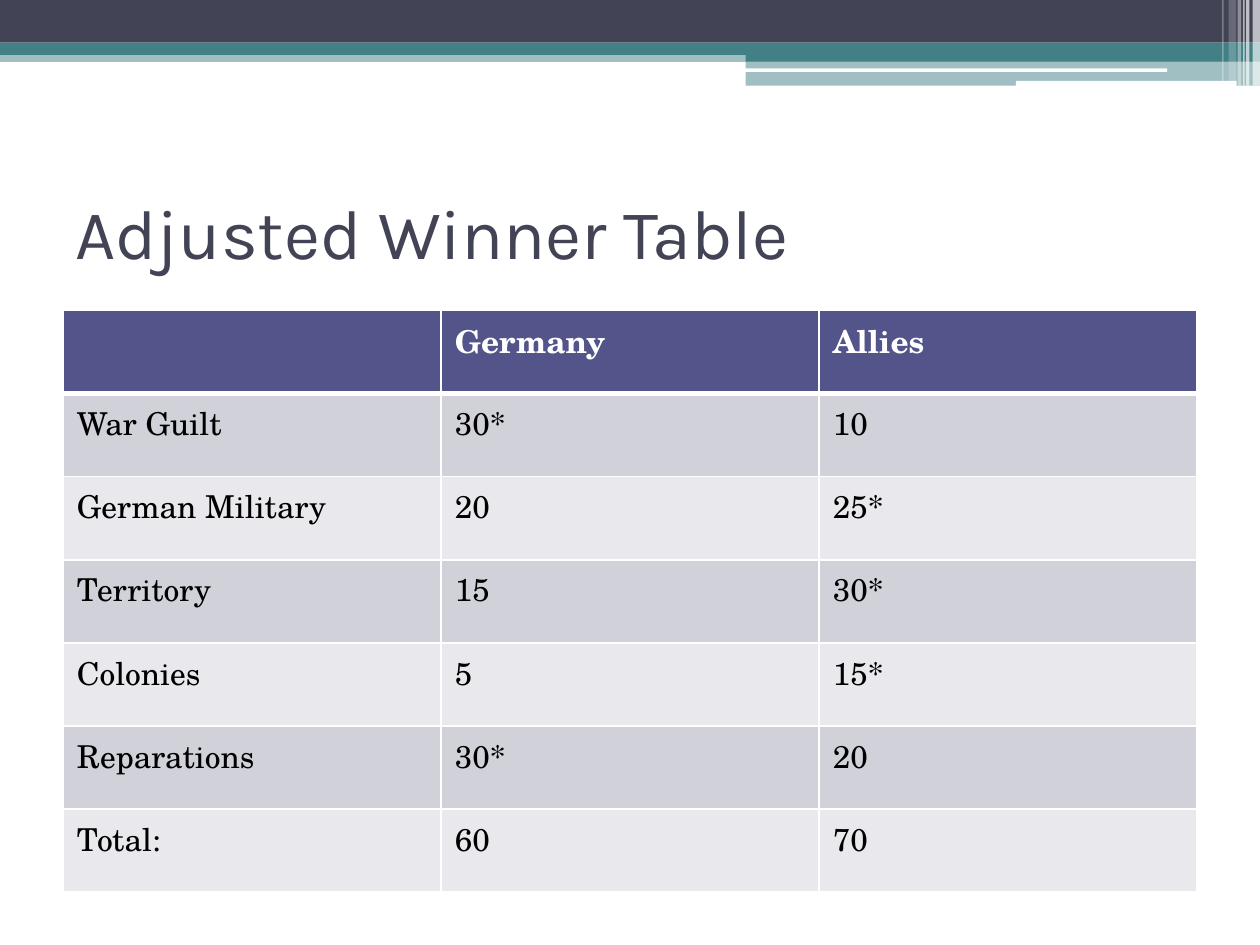
from dataclasses import dataclass

import pptx
import pptx.dml.color
import pptx.enum.shapes
import pptx.enum.text
import pptx.oxml.ns
import pptx.slide
import pptx.table
import pptx.util
from lxml import etree

Cm = pptx.util.Cm
Pt = pptx.util.Pt
RGBColor = pptx.dml.color.RGBColor
Preset = pptx.enum.shapes.MSO_SHAPE
qn = pptx.oxml.ns.qn

WHITE = RGBColor(0xFF, 0xFF, 0xFF)
BLACK = RGBColor(0x00, 0x00, 0x00)
SLATE = RGBColor(0x42, 0x44, 0x56)
TEAL = RGBColor(0x43, 0x80, 0x86)
INDIGO = RGBColor(0x53, 0x54, 0x8A)
DARK_BAND = RGBColor(0xD1, 0xD1, 0xDA)
LIGHT_BAND = RGBColor(0xE9, 0xE9, 0xED)

TITLE_FONT = "Karla"
TABLE_FONT = "TeX Gyre Schola"


@dataclass(frozen=True)
class Bar:
    left: float
    top: float
    width: float
    height: float
    color: RGBColor
    opacity: int = 100
    rounded: bool = False


BARS = [
    Bar(0, 1.02, 25.4, 0.23, TEAL, 50),
    Bar(0, 0, 25.4, 0.86, SLATE),
    Bar(0, 0.86, 25.4, 0.25, TEAL),
    Bar(15.03, 0.99, 10.37, 0.25, TEAL),
    Bar(15.03, 1.23, 10.37, 0.5, TEAL, 50),
    Bar(15.02, 1.38, 8.51, 0.07, WHITE, rounded=True),
    Bar(20.48, 1.63, 4.45, 0.1, WHITE, rounded=True),
    Bar(25.25, 0, 0.15, 1.73, WHITE, 65),
    Bar(25.12, 0, 0.07, 1.73, WHITE, 65),
    Bar(25.06, 0, 0.03, 1.73, WHITE, 60),
    Bar(24.95, 0, 0.07, 1.73, WHITE, 40),
    Bar(24.77, 0, 0.15, 1.63, WHITE, 20),
    Bar(24.64, 0, 0.03, 1.63, WHITE, 30),
]

ROWS = [
    ("", "Germany", "Allies"),
    ("War Guilt", "30*", "10"),
    ("German Military", "20", "25*"),
    ("Territory", "15", "30*"),
    ("Colonies", "5", "15*"),
    ("Reparations", "30*", "20"),
    ("Total:", "60", "70"),
]


def draw_bar(slide: pptx.slide.Slide, bar: Bar) -> None:
    preset = Preset.ROUNDED_RECTANGLE if bar.rounded else Preset.RECTANGLE
    shape = slide.shapes.add_shape(
        preset, Cm(bar.left), Cm(bar.top), Cm(bar.width), Cm(bar.height)
    )
    shape.shadow.inherit = False
    shape.line.fill.background()
    shape.fill.solid()
    shape.fill.fore_color.rgb = bar.color
    if bar.opacity < 100:
        color = shape.fill._xPr.find(".//" + qn("a:srgbClr"))
        etree.SubElement(color, qn("a:alpha"), val=str(bar.opacity * 1000))


def draw_title(slide: pptx.slide.Slide, text: str) -> None:
    shape = slide.shapes.add_textbox(Cm(1.27), Cm(3.18), Cm(22.86), Cm(2.97))
    frame = shape.text_frame
    frame.word_wrap = True
    frame.vertical_anchor = pptx.enum.text.MSO_ANCHOR.MIDDLE
    paragraph = frame.paragraphs[0]
    paragraph.text = text
    paragraph.font.name = TITLE_FONT
    paragraph.font.size = Pt(40)
    paragraph.font.color.rgb = SLATE


def add_borders(cell: pptx.table._Cell, top: int, bottom: int) -> None:
    properties = cell._tc.get_or_add_tcPr()
    for side, width in (("L", 1), ("R", 1), ("T", top), ("B", bottom)):
        line = etree.SubElement(properties, qn(f"a:ln{side}"), w=str(Pt(width)))
        fill = etree.SubElement(line, qn("a:solidFill"))
        etree.SubElement(fill, qn("a:srgbClr"), val=str(WHITE))


def style_cell(cell: pptx.table._Cell, text: str, row: int) -> None:
    header = row == 0
    add_borders(cell, top=3 if row == 1 else 1, bottom=3 if header else 1)
    cell.fill.solid()
    band = DARK_BAND if row % 2 else LIGHT_BAND
    cell.fill.fore_color.rgb = INDIGO if header else band
    cell.margin_left = cell.margin_right = Cm(0.28)
    cell.margin_top = cell.margin_bottom = Cm(0.13)
    paragraph = cell.text_frame.paragraphs[0]
    paragraph.text = text
    paragraph.font.name = TABLE_FONT
    paragraph.font.size = Pt(18)
    paragraph.font.bold = header
    paragraph.font.color.rgb = WHITE if header else BLACK


def draw_table(slide: pptx.slide.Slide, rows: list[tuple[str, ...]]) -> None:
    table = slide.shapes.add_table(
        len(rows), len(rows[0]), Cm(1.27), Cm(6.26), Cm(22.86), Cm(11.73)
    ).table
    table.horz_banding = False
    for row, texts in enumerate(rows):
        for column, text in enumerate(texts):
            style_cell(table.cell(row, column), text, row)


def main() -> None:
    presentation = pptx.Presentation()
    presentation.slide_width = Cm(25.4)
    presentation.slide_height = Cm(19.05)
    slide = presentation.slides.add_slide(presentation.slide_layouts[6])
    for bar in BARS:
        draw_bar(slide, bar)
    draw_title(slide, "Adjusted Winner Table")
    draw_table(slide, ROWS)
    presentation.save("out.pptx")


if __name__ == "__main__":
    main()
